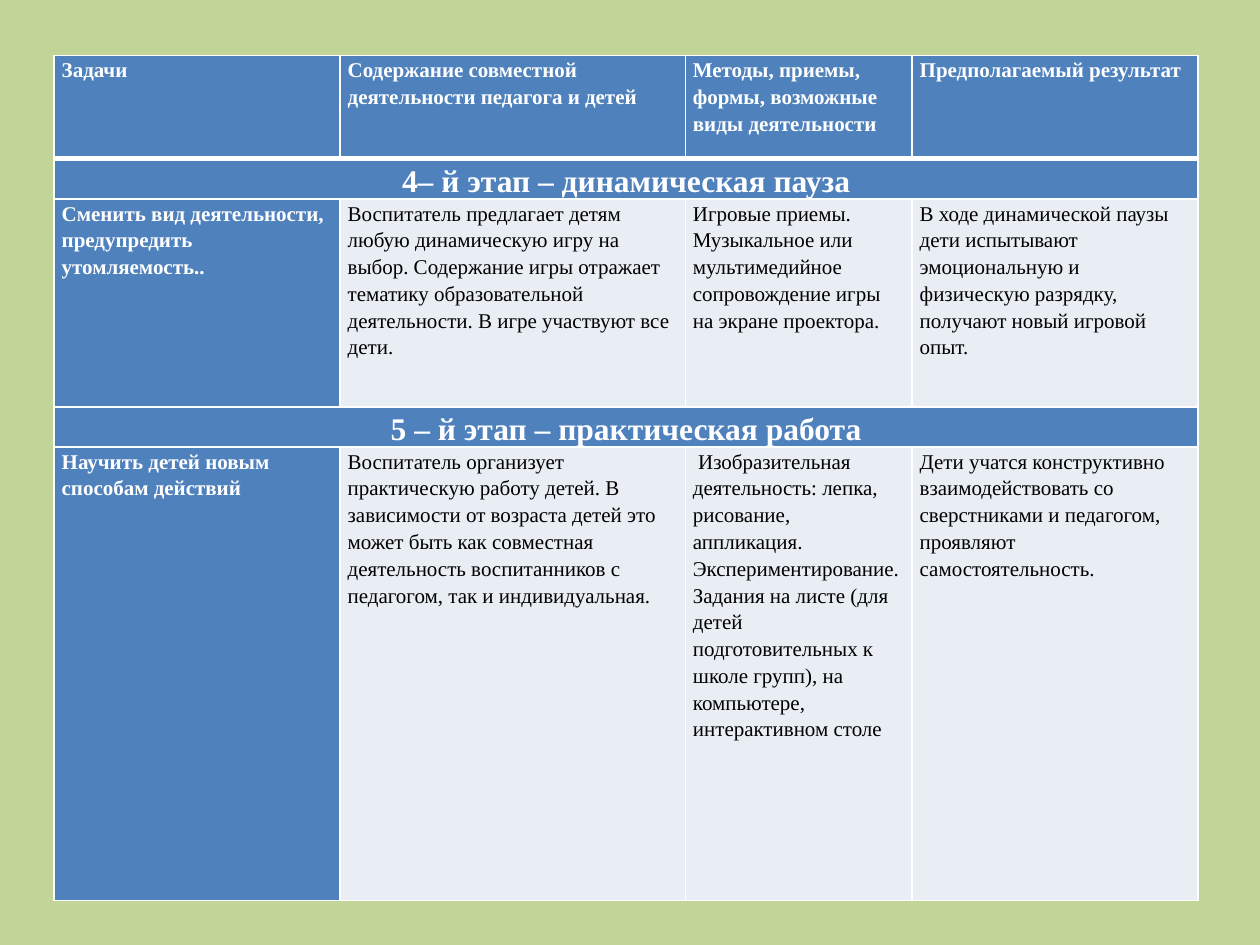
from lxml import etree
from pptx import Presentation
from pptx.dml.color import RGBColor
from pptx.enum.text import PP_ALIGN
from pptx.oxml.ns import qn
from pptx.util import Inches, Pt

CENTER = PP_ALIGN.CENTER
FONT = "Times New Roman"
COLORS = {
    "background": "C1D598",
    "header": "4F81BD",
    "body": "E9EDF4",
    "light_text": "FFFFFF",
    "dark_text": "000000",
    "border": "FFFFFF",
}

# Content: a row with a single entry is a stage heading across the table
ROWS = [
    ["Задачи",
     "Содержание совместной деятельности педагога и детей",
     "Методы, приемы, формы, возможные виды деятельности",
     "Предполагаемый результат"],
    ["4– й этап – динамическая пауза"],
    ["Сменить вид деятельности, предупредить утомляемость..",
     "Воспитатель предлагает детям любую динамическую игру на выбор. "
     "Содержание игры отражает тематику образовательной деятельности. "
     "В игре участвуют все дети.",
     "Игровые приемы. Музыкальное или мультимедийное сопровождение игры "
     "на экране проектора.",
     "В ходе динамической паузы дети испытывают эмоциональную и физическую "
     "разрядку, получают новый игровой опыт."],
    ["5 – й этап – практическая работа"],
    ["Научить детей новым способам действий",
     "Воспитатель организует практическую работу детей. В зависимости от "
     "возраста детей это может быть как совместная деятельность воспитанников "
     "с педагогом, так и индивидуальная.",
     " Изобразительная деятельность: лепка, рисование, аппликация.\n"
     "Экспериментирование.\n"
     "Задания на листе (для детей подготовительных к школе групп), "
     "на компьютере, интерактивном столе",
     "Дети учатся конструктивно взаимодействовать со сверстниками и "
     "педагогом, проявляют самостоятельность."],
]
COLUMN_WIDTHS = [2.27, 2.74, 1.8, 2.27]
ROW_HEIGHTS = [0.82, 0.27, 1.65, 0.27, 3.6]
LEFT, TOP = 0.43, 0.44


def color(name):
    return RGBColor.from_string(COLORS[name])


def set_borders(cell, bottom_width):
    properties = cell._tc.get_or_add_tcPr()
    sides = [("L", 1), ("R", 1), ("T", 1), ("B", bottom_width)]
    for position, (side, width) in enumerate(sides):
        line = etree.Element(qn(f"a:ln{side}"), w=str(Pt(width)))
        fill = etree.SubElement(line, qn("a:solidFill"))
        etree.SubElement(fill, qn("a:srgbClr"), val=COLORS["border"])
        properties.insert(position, line)


def format_cell(cell, text, is_header, is_stage, bottom_width):
    cell.margin_left = cell.margin_right = Inches(0.06)
    cell.margin_top = cell.margin_bottom = 0
    cell.fill.solid()
    cell.fill.fore_color.rgb = color("header" if is_header else "body")
    set_borders(cell, bottom_width)
    cell.text_frame.text = text
    for paragraph in cell.text_frame.paragraphs:
        paragraph.line_spacing = 1.15
        if is_stage:
            paragraph.alignment = CENTER
        font = paragraph.font
        for run in paragraph.runs:
            font = run.font
            font.name = FONT
            font.size = Pt(18 if is_stage else 12)
            font.bold = is_header
            font.color.rgb = color("light_text" if is_header else "dark_text")


presentation = Presentation()
presentation.slide_width = Inches(10)
presentation.slide_height = Inches(7.5)
slide = presentation.slides.add_slide(presentation.slide_layouts[6])
slide.background.fill.solid()
slide.background.fill.fore_color.rgb = color("background")

# Table grid
table = slide.shapes.add_table(
    len(ROWS), len(COLUMN_WIDTHS), Inches(LEFT), Inches(TOP),
    Inches(sum(COLUMN_WIDTHS)), Inches(sum(ROW_HEIGHTS))).table
table.horz_banding = False
for column, width in zip(table.columns, COLUMN_WIDTHS):
    column.width = Inches(width)
for row, height in zip(table.rows, ROW_HEIGHTS):
    row.height = Inches(height)

# Cells: the first row, the first column and the stage headings are blue
last_column = len(COLUMN_WIDTHS) - 1
for row_index, texts in enumerate(ROWS):
    is_stage = len(texts) == 1
    if is_stage:
        table.cell(row_index, 0).merge(table.cell(row_index, last_column))
    for column_index, text in enumerate(texts):
        format_cell(table.cell(row_index, column_index), text,
                    is_header=row_index == 0 or column_index == 0,
                    is_stage=is_stage,
                    bottom_width=3 if row_index == 0 else 1)

presentation.save("out.pptx")
